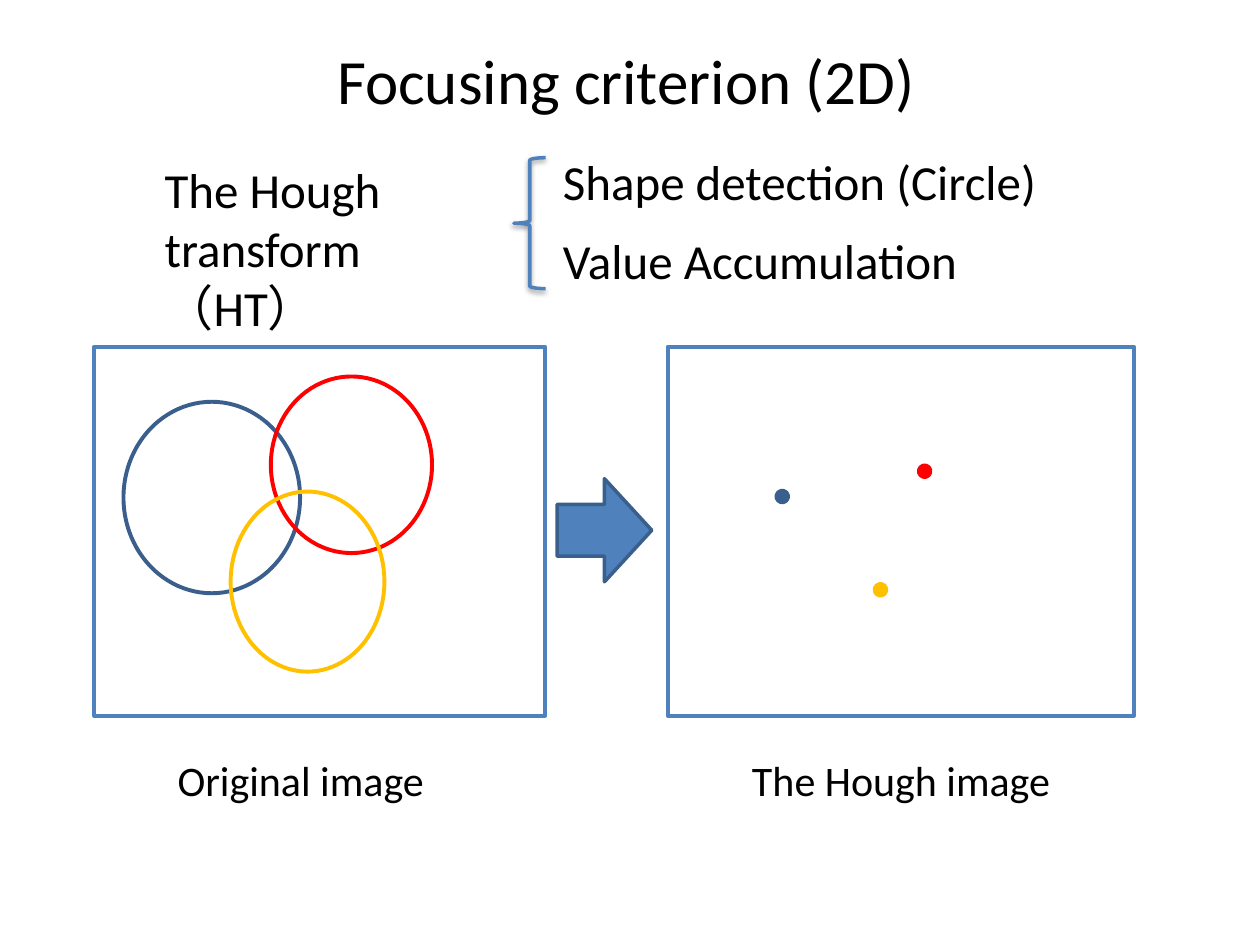
from lxml import etree
from pptx import Presentation
from pptx import util as u
from pptx.dml.color import RGBColor
from pptx.enum import shapes, text
from pptx.oxml import ns

BLACK = RGBColor(0x00, 0x00, 0x00)
BLUE = RGBColor(0x4F, 0x81, 0xBD)
NAVY = RGBColor(0x3A, 0x5F, 0x8C)
RED = RGBColor(0xFF, 0x00, 0x00)
AMBER = RGBColor(0xFF, 0xC0, 0x00)

FRAME_FORMAT = {
    "word_wrap": True,
    "auto_size": text.MSO_AUTO_SIZE.NONE,
    "vertical_anchor": text.MSO_ANCHOR.TOP,
}
DOT_SIZE = 0.1
PANEL_TOP, PANEL_HEIGHT = 6.99, 7.44
CAPTION_TOP = 15.09

# Each circle (left, top, width, height) and its peak (left, top)
CIRCLES = [
    (NAVY, (2.49, 8.1, 3.56, 3.86), (15.72, 9.96)),
    (RED, (5.46, 7.59, 3.25, 3.56), (18.59, 9.45)),
    (AMBER, (4.65, 9.91, 3.1, 3.63), (17.7, 11.84)),
]


def set_all(target, values):
    for name, value in values.items():
        setattr(target, name, value)


def lengths(box):
    return [u.Cm(value) for value in box]


def write(shape, wording, size, alignment=text.PP_ALIGN.LEFT):
    set_all(shape.text_frame, FRAME_FORMAT)
    paragraph = shape.text_frame.paragraphs[0]
    paragraph.alignment = alignment
    run = paragraph.add_run()
    run.text = wording
    set_all(run.font, {"name": "Calibri", "size": u.Pt(size)})
    run.font.color.rgb = BLACK


def add_title(slide, wording, box):
    title = slide.shapes.title
    set_all(title, dict(zip(("left", "top", "width", "height"), lengths(box))))
    write(title, wording, 36, text.PP_ALIGN.CENTER)


def add_label(slide, wording, box, size):
    write(slide.shapes.add_textbox(*lengths(box)), wording, size)


def add_outline(slide, kind, box, color, weight=2.25, fill=None):
    shape = slide.shapes.add_shape(kind, *lengths(box))
    shape.shadow.inherit = False
    if fill is None:
        shape.fill.background()
    else:
        shape.fill.solid()
        shape.fill.fore_color.rgb = fill
    shape.line.color.rgb = color
    shape.line.width = u.Pt(weight)
    return shape


def add_shadow(shape):
    effects = shape._element.spPr.find(ns.qn("a:effectLst"))
    shadow = etree.SubElement(
        effects, ns.qn("a:outerShdw"), blurRad=str(u.Pt(3.1)),
        dist=str(u.Pt(1.6)), dir="5400000", rotWithShape="0")
    color = etree.SubElement(shadow, ns.qn("a:srgbClr"), val=str(BLACK))
    etree.SubElement(color, ns.qn("a:alpha"), val="38000")


def main():
    presentation = Presentation()
    set_all(presentation, {"slide_width": u.Cm(25.4), "slide_height": u.Cm(19.05)})
    slide = presentation.slides.add_slide(presentation.slide_layouts[5])
    kinds = shapes.MSO_SHAPE

    # Heading and method name
    add_title(slide, "Focusing criterion (2D)", (3.58, 0.71, 18.08, 1.8))
    add_label(slide, "The Hough transform （HT）", (3.07, 3.1, 7.09, 2.64), 28)

    # Image panels with their captions
    for left, width, caption, caption_left in (
        (1.9, 9.09, "Original image", 3.33),
        (13.46, 9.4, "The Hough image", 14.91),
    ):
        add_outline(slide, kinds.RECTANGLE,
                    (left, PANEL_TOP, width, PANEL_HEIGHT), BLUE)
        add_label(slide, caption, (caption_left, CAPTION_TOP, 7.92, 1.27), 24)

    # Circles and the peaks they turn into
    for color, circle, peak in CIRCLES:
        add_outline(slide, kinds.OVAL, circle, color)
        add_outline(slide, kinds.OVAL, (*peak, DOT_SIZE, DOT_SIZE), color, 6)
    add_outline(slide, kinds.RIGHT_ARROW, (11.23, 9.65, 1.91, 2.08), NAVY, 2, BLUE)

    # The two steps of the method, joined by a brace
    for wording, top in (("Shape detection (Circle)", 2.92),
                         ("Value Accumulation", 4.52)):
        add_label(slide, wording, (11.1, top, 12.19, 1.45), 28)
    brace = add_outline(slide, kinds.LEFT_BRACE, (10.36, 3.18, 0.64, 2.64), BLUE, 2)
    add_shadow(brace)

    presentation.save("out.pptx")


if __name__ == "__main__":
    main()
